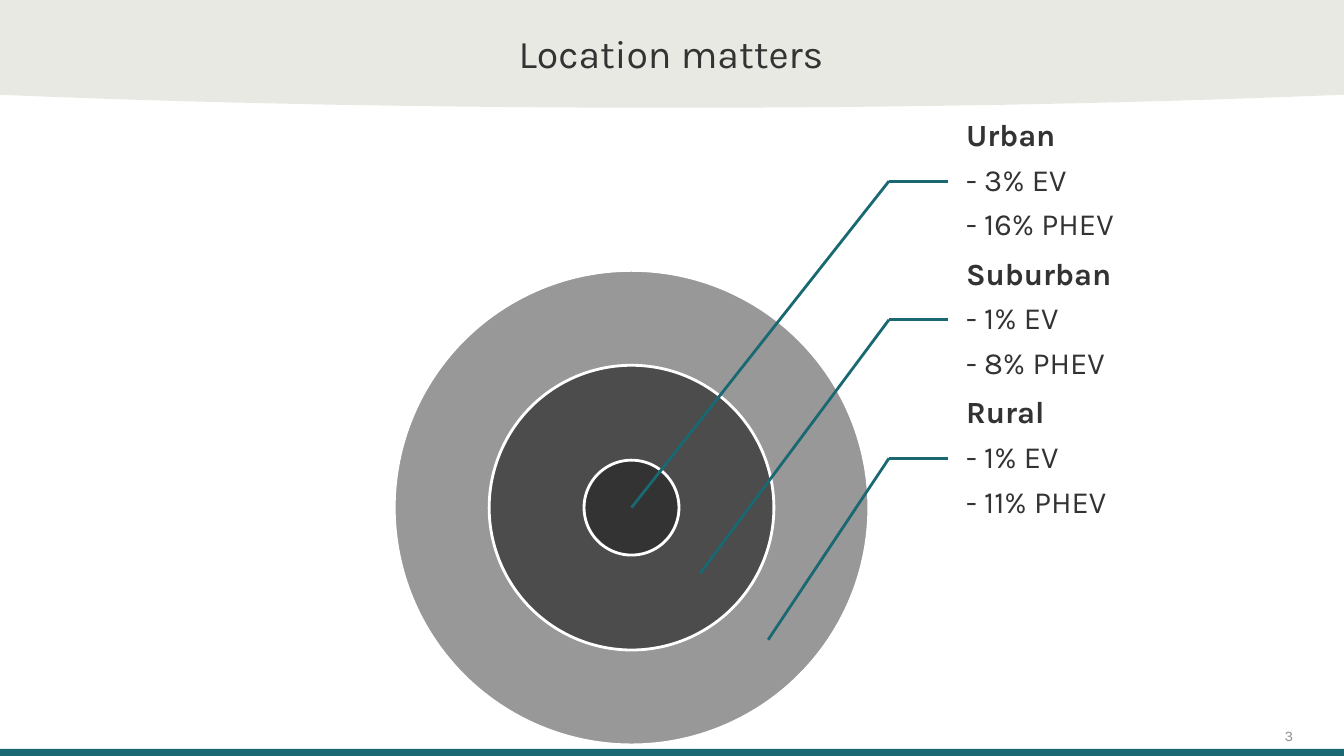
import pptx
import pptx.dml.color
import pptx.enum.shapes
import pptx.enum.text
import pptx.oxml
import pptx.oxml.ns
import pptx.util

Pt = pptx.util.Pt
ALIGN = pptx.enum.text.PP_ALIGN
ANCHOR = pptx.enum.text.MSO_ANCHOR
SHAPE = pptx.enum.shapes.MSO_SHAPE

# Content
TITLE = "Location matters"
PAGE_NUMBER = "3"
AREAS = [
    ("Urban", "- 3% EV", "- 16% PHEV"),
    ("Suburban", "- 1% EV", "- 8% PHEV"),
    ("Rural", "- 1% EV", "- 11% PHEV"),
]
# Rings from outside in: diameter in units of the core, opacity in percent
RINGS = [(5, 50), (3, 75), (1, 100)]

# Style
FONT = "Karla"
DARK, TEAL, SAND, GREY, WHITE = "333333", "196872", "E9E9E3", "909090", "FFFFFF"

# Layout, in points
WIDTH, HEIGHT = 960, 540
CENTER_X, CENTER_Y, CORE = 451.1, 362.6, 67.8
LABEL_X, LABEL_Y, LABEL_W, LABEL_H = 677.5, 79.9, 169.9, 99
ELBOW_X = 635
TARGET_STEP_X, TARGET_STEP_Y = 48.8, 47.2
# Lower edge of the header: two cubic curves meeting in the middle
HEADER_CURVES = [
    [(942.5, 68.4), (797.8, 74.2), (642.2, 77), (479, 77)],
    [(479, 77), (316.1, 77), (160.6, 74.2), (15.8, 68.4)],
]
CURVE_STEPS = 16


def color(value):
    return pptx.dml.color.RGBColor.from_string(value)


def paint(shape, fill, line=None):
    shape.shadow.inherit = False
    shape.fill.solid()
    shape.fill.fore_color.rgb = color(fill)
    if line:
        shape.line.color.rgb = color(line)
        shape.line.width = Pt(2)
    else:
        shape.line.fill.background()


def set_opacity(shape, percent):
    tone = shape.fill._xPr.find(".//" + pptx.oxml.ns.qn("a:srgbClr"))
    tone.append(pptx.oxml.parse_xml(
        f'<a:alpha {pptx.oxml.ns.nsdecls("a")} val="{percent * 1000}"/>'))


def add_text(left, top, width, height, lines, size, ink=DARK, align=ALIGN.LEFT,
             anchor=ANCHOR.TOP, insets=(0, 0, 0, 0), bold_first=False,
             spacing=None, after=0):
    box = page.shapes.add_textbox(Pt(left), Pt(top), Pt(width), Pt(height))
    frame = box.text_frame
    frame.word_wrap = True
    frame.vertical_anchor = anchor
    (frame.margin_left, frame.margin_top,
     frame.margin_right, frame.margin_bottom) = map(Pt, insets)
    for index, line in enumerate(lines):
        para = frame.add_paragraph() if index else frame.paragraphs[0]
        para.alignment = align
        para.line_spacing = spacing
        para.space_after = Pt(after)
        span = para.add_run()
        span.text = line
        span.font.name = FONT
        span.font.size = Pt(size)
        span.font.bold = bold_first and index == 0
        span.font.color.rgb = color(ink)
    return box


def add_line(x1, y1, x2, y2):
    line = page.shapes.add_connector(
        pptx.enum.shapes.MSO_CONNECTOR.STRAIGHT, Pt(x1), Pt(y1), Pt(x2), Pt(y2))
    line.line.color.rgb = color(TEAL)
    line.line.width = Pt(2)
    line._element.spPr.append(pptx.oxml.parse_xml(
        f'<a:effectLst {pptx.oxml.ns.nsdecls("a")}/>'))
    return line


def curve_point(curve, t):
    weights = ((1 - t) ** 3, 3 * t * (1 - t) ** 2, 3 * t * t * (1 - t), t ** 3)
    return tuple(sum(w * p[axis] for w, p in zip(weights, curve)) for axis in (0, 1))


deck = pptx.Presentation()
deck.slide_width, deck.slide_height = Pt(WIDTH), Pt(HEIGHT)
page = deck.slides.add_slide(deck.slide_layouts[6])

# Footer bar
bar = page.shapes.add_shape(SHAPE.RECTANGLE, 0, Pt(535), Pt(WIDTH), Pt(5))
paint(bar, TEAL)

# Header with curved lower edge
outline = [(WIDTH, 0), (WIDTH, 67.7)]
for curve in HEADER_CURVES:
    outline += [curve_point(curve, n / CURVE_STEPS) for n in range(CURVE_STEPS + 1)]
outline.append((0, 67.7))
builder = page.shapes.build_freeform(0, 0)
builder.add_line_segments([(Pt(x), Pt(y)) for x, y in outline], close=True)
paint(builder.convert_to_shape(), SAND)

# Page number and title
add_text(699.8, 503.3, 223.9, 28.8, [PAGE_NUMBER], 10.5, GREY, ALIGN.RIGHT, ANCHOR.BOTTOM)
add_text(185.8, 21.2, 586.8, 33.8, [TITLE], 28, align=ALIGN.CENTER)

# Concentric rings
for units, opacity in RINGS:
    size = units * CORE
    ring = page.shapes.add_shape(SHAPE.OVAL, Pt(CENTER_X - size / 2),
                                 Pt(CENTER_Y - size / 2), Pt(size), Pt(size))
    paint(ring, DARK, WHITE)
    if opacity < 100:
        set_opacity(ring, opacity)

# Labels with leader lines
for row, lines in enumerate(AREAS):
    top = LABEL_Y + row * LABEL_H
    middle = top + LABEL_H / 2
    label = add_text(LABEL_X, top, LABEL_W, LABEL_H, lines, 22,
                     anchor=ANCHOR.MIDDLE, insets=(12.6, 2.5, 2.5, 2.5),
                     bold_first=True, spacing=0.9, after=8.2)
    add_line(ELBOW_X, middle, LABEL_X, middle).end_connect(label, 1)
    add_line(ELBOW_X, middle, CENTER_X + row * TARGET_STEP_X,
             CENTER_Y + row * TARGET_STEP_Y)

deck.save("out.pptx")
